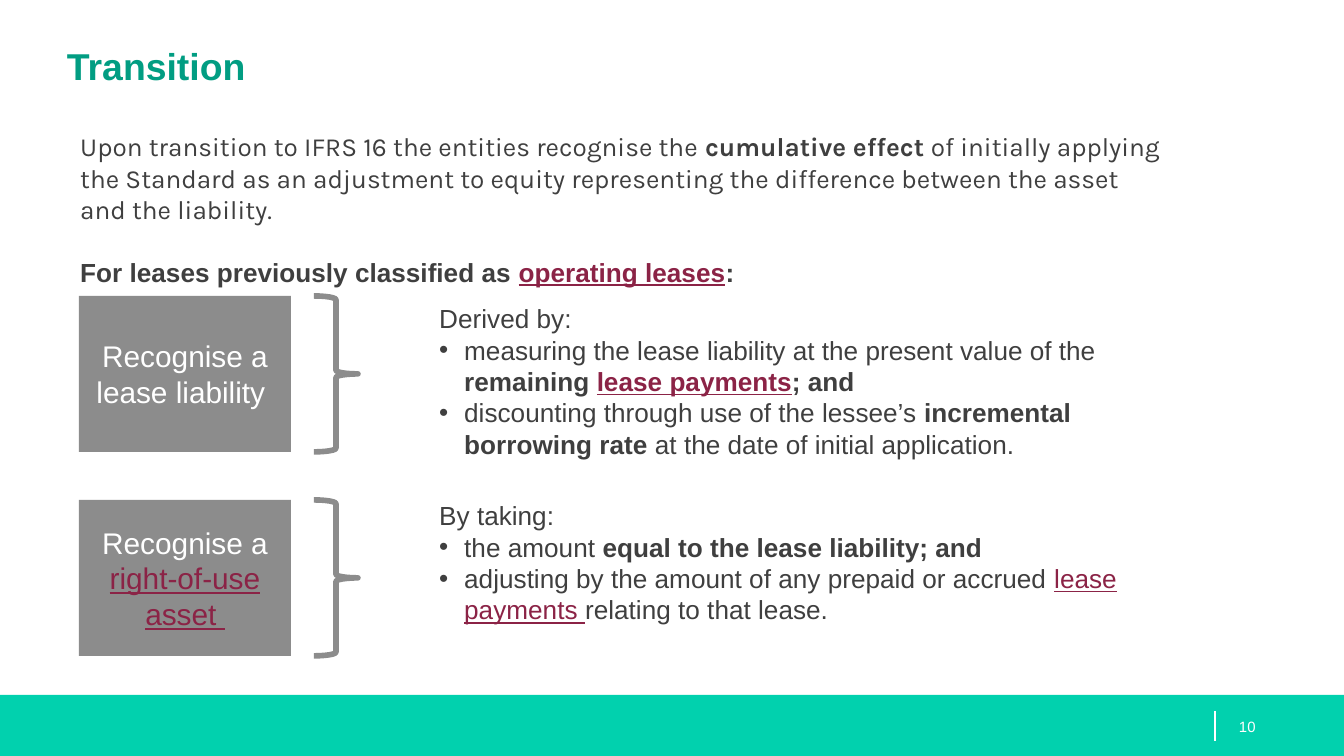
import pptx
import pptx.dml.color
import pptx.enum.shapes
import pptx.enum.text
import pptx.oxml.ns
import pptx.util
from lxml import etree

# Page size in px, and the one scale from px to EMU
WIDTH, HEIGHT = 1344, 756
EMU_PER_PX = 9144000 / WIDTH

GREEN, TEAL = "01D1AE", "019D82"
GREY, DARK, WINE, WHITE = "8C8C8C", "3F3F3F", "8B2346", "FFFFFF"

BOLD = {"bold": True}
LINK = {"color": WINE, "underline": True}
BOLD_LINK = {**BOLD, **LINK}
KARLA = {"font": "Karla"}
KARLA_BOLD = {**KARLA, **BOLD}

SHAPES = pptx.enum.shapes.MSO_SHAPE
MIDDLE = pptx.enum.text.MSO_ANCHOR.MIDDLE
CENTER = pptx.enum.text.PP_ALIGN.CENTER


def px(value):
    return pptx.util.Emu(round(value * EMU_PER_PX))


def rgb(color):
    return pptx.dml.color.RGBColor.from_string(color)


def add_span(para, text, size=14, font="Arial", color=DARK, bold=False, underline=False):
    span = para.add_run()
    span.text = text
    span.font.size = pptx.util.Pt(size)
    span.font.name = font
    span.font.color.rgb = rgb(color)
    span.font.bold = bold
    span.font.underline = underline


def add_bullet(para, indent=25):
    properties = para._p.get_or_add_pPr()
    properties.set("marL", str(px(indent)))
    properties.set("indent", str(-px(indent)))
    for tag, name, value in (("a:buFont", "typeface", "Arial"), ("a:buChar", "char", "•")):
        etree.SubElement(properties, pptx.oxml.ns.qn(tag)).set(name, value)


def fill_text(frame, paragraphs, size=14, gap=0, align=None, bullets=False, **style):
    """Write paragraphs, each a list of (text, format) spans."""
    frame.word_wrap = True
    for index, spans in enumerate(paragraphs):
        para = frame.add_paragraph() if index else frame.paragraphs[0]
        para.alignment = align
        para.line_spacing = pptx.util.Pt(size * 1.2)
        if index:
            para.space_before = pptx.util.Pt(gap)
            if bullets:
                add_bullet(para)
        for text, extra in spans:
            add_span(para, text, **{"size": size, **style, **extra})


def add_text(page, left, top, width, height, paragraphs, inset=None, anchor=None, **style):
    box = page.shapes.add_textbox(px(left), px(top), px(width), px(height))
    frame = box.text_frame
    if inset is not None:
        frame.margin_left = px(inset)
        frame.margin_top = frame.margin_right = frame.margin_bottom = 0
    if anchor is not None:
        frame.vertical_anchor = anchor
    fill_text(frame, paragraphs, **style)


def add_block(page, left, top, width, height, color):
    block = page.shapes.add_shape(SHAPES.RECTANGLE, px(left), px(top), px(width), px(height))
    block.shadow.inherit = False
    block.fill.solid()
    block.fill.fore_color.rgb = rgb(color)
    block.line.fill.background()
    return block


def add_brace(page, left, top, width, height):
    brace = page.shapes.add_shape(SHAPES.RIGHT_BRACE, px(left), px(top), px(width), px(height))
    brace.shadow.inherit = False
    brace.fill.background()
    brace.line.color.rgb = rgb(GREY)
    brace.line.width = pptx.util.Pt(3)


def add_line(page, x, top, bottom):
    line = page.shapes.add_connector(
        pptx.enum.shapes.MSO_CONNECTOR.STRAIGHT, px(x), px(top), px(x), px(bottom))
    line.line.color.rgb = rgb(WHITE)
    line.line.width = pptx.util.Pt(0.75)
    etree.SubElement(line._element.spPr, pptx.oxml.ns.qn("a:effectLst"))


def add_footer(page):
    add_block(page, 0, 695, WIDTH, HEIGHT - 695, GREEN)
    add_line(page, 1215, 711, 741)
    add_text(page, 1212, 697, 101, 59, [[("10", {})]], inset=27, anchor=MIDDLE,
             size=8, color=WHITE)


def add_step(page, top, label, text_top, text_height, details):
    """A grey box, its brace and the explanation beside them."""
    block = add_block(page, 79, top, 212, 156, GREY)
    block.text_frame.vertical_anchor = MIDDLE
    fill_text(block.text_frame, [label], size=16, color=WHITE, align=CENTER)
    add_brace(page, 314, top, 44, 156)
    add_text(page, 426, text_top, 722, text_height, details, bullets=True)


def main():
    deck = pptx.Presentation()
    deck.slide_width, deck.slide_height = px(WIDTH), px(HEIGHT)
    page = deck.slides.add_slide(deck.slide_layouts[6])

    add_footer(page)

    # Title and introduction
    add_text(page, 67, 43, 1210, 97, [[("Transition", BOLD)]], inset=0, size=20, color=TEAL)
    add_text(page, 67, 124, 1109, 364, [
        [("Upon transition to IFRS 16 the entities recognise the ", KARLA),
         ("cumulative effect ", KARLA_BOLD),
         ("of initially applying the Standard as an adjustment to equity representing "
          "the difference between the asset and the liability.", KARLA)],
        [("For leases previously classified as ", BOLD),
         ("operating leases", BOLD_LINK), (":", BOLD)],
    ], gap=16.8)

    # Lease liability
    add_step(page, 296, [("Recognise a lease liability ", {})], 296, 172, [
        [("Derived by:", {})],
        [("measuring the lease liability at the present value of the ", {}),
         ("remaining ", BOLD), ("lease payments", BOLD_LINK), ("; and", BOLD)],
        [("discounting through use of the lessee’s ", {}),
         ("incremental borrowing rate ", BOLD),
         ("at the date of initial application.", {})],
    ])

    # Right-of-use asset
    add_step(page, 500, [("Recognise a ", {}), ("right-of-use asset ", LINK)], 493, 140, [
        [("By taking:", {})],
        [("the amount ", {}), ("equal to the lease liability; and", BOLD)],
        [("adjusting by the amount of any prepaid or accrued ", {}),
         ("lease payments ", LINK), ("relating to that lease.", {})],
    ])

    deck.save("out.pptx")


if __name__ == "__main__":
    main()
